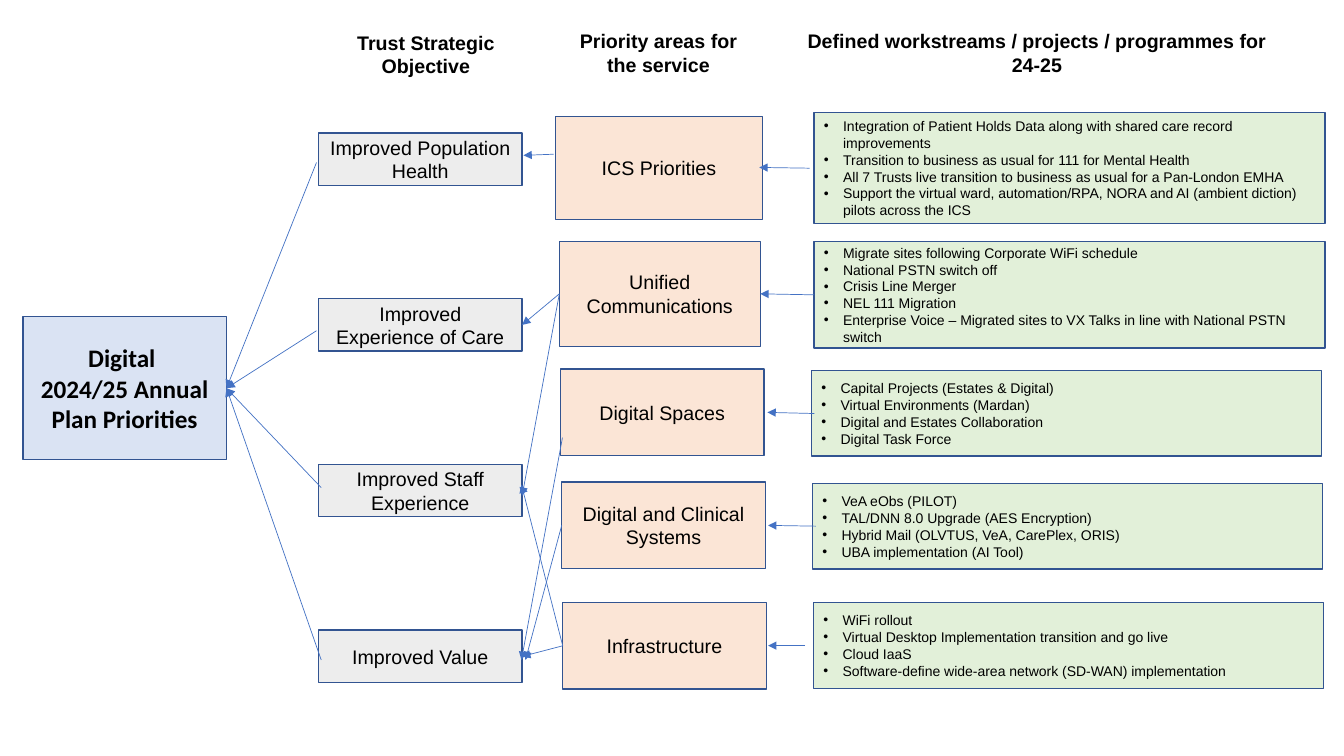
from dataclasses import dataclass
from typing import NamedTuple, Union

from lxml.etree import SubElement
from pptx import Presentation
from pptx.dml.color import RGBColor
from pptx.enum.shapes import MSO_CONNECTOR as Connector, MSO_SHAPE as Shape
from pptx.enum.text import MSO_ANCHOR as Anchor, MSO_AUTO_SIZE as AutoSize, PP_ALIGN as Align
from pptx.oxml.ns import qn
from pptx.util import Emu, Inches, Pt

# Colours
BLACK = RGBColor(0x00, 0x00, 0x00)
OUTLINE = RGBColor(0x32, 0x54, 0x91)
ARROW = RGBColor(0x44, 0x72, 0xC4)
BLUE = RGBColor(0xDA, 0xE3, 0xF3)
GREY = RGBColor(0xED, 0xED, 0xED)
PEACH = RGBColor(0xFB, 0xE5, 0xD6)
GREEN = RGBColor(0xE2, 0xF0, 0xD9)

# Grid: 100 columns by 100 rows over the whole slide
WIDTH, HEIGHT = Inches(13.33), Inches(7.5)
LEFT, RIGHT = 1, 3
BULLET_INDENT = Inches(0.19)


def col(n: float) -> Emu:
    return Emu(round(WIDTH * n / 100))


def row(n: float) -> Emu:
    return Emu(round(HEIGHT * n / 100))


class Area(NamedTuple):
    x: float
    y: float
    w: float
    h: float

    def emu(self) -> tuple:
        return col(self.x), row(self.y), col(self.w), row(self.h)


class Point(NamedTuple):
    x: float
    y: float


class Side(NamedTuple):
    box: str
    site: int


@dataclass
class Box:
    key: str
    area: Area
    lines: list
    fill: RGBColor


@dataclass
class Heading:
    area: Area
    text: str


@dataclass
class Arrow:
    tail: Union[Point, Side]
    tip: Union[Point, Side]


HEADINGS = [
    Heading(Area(22.58, 3.4, 18.23, 7.6), "Trust Strategic Objective"),
    Heading(Area(41.4, 3.2, 15.2, 7.6), "Priority areas for the service"),
    Heading(Area(58.44, 3.2, 37.43, 7.6), "Defined workstreams / projects / programmes for 24-25"),
]

PLAN = Box("plan", Area(1.7, 41.9, 15.15, 18.9),
           ["Digital ", "2024/25 Annual Plan Priorities"], BLUE)

OBJECTIVES = [
    Box(key, Area(23.7, 17.6 + 21.92 * i, 15.15, 6.93), [text], GREY)
    for i, (key, text) in enumerate([
        ("health", "Improved Population Health"),
        ("care", "Improved Experience of Care"),
        ("staff", "Improved Staff Experience"),
        ("value", "Improved Value"),
    ])
]

PRIORITIES = [
    Box("ics", Area(41.35, 15.4, 15.38, 13.6), ["ICS Priorities"], PEACH),
    Box("unified", Area(41.62, 31.92, 14.95, 13.9), ["Unified Communications"], PEACH),
    Box("spaces", Area(41.7, 48.8, 15.15, 11.45), ["Digital Spaces"], PEACH),
    Box("systems", Area(41.8, 63.75, 15.15, 11.45), ["Digital and Clinical Systems"], PEACH),
    Box("infra", Area(41.87, 79.7, 15.15, 11.45), ["Infrastructure"], PEACH),
]

WORKSTREAMS = [
    Box("ics work", Area(60.57, 14.9, 38.03, 14.65), [
        "Integration of Patient Holds Data along with shared care record improvements",
        "Transition to business as usual for 111 for Mental Health",
        "All 7 Trusts live transition to business as usual for a Pan-London EMHA",
        "Support the virtual ward, automation/RPA, NORA and AI (ambient diction) "
        "pilots across the ICS"], GREEN),
    Box("unified work", Area(60.57, 31.95, 38.03, 14.1), [
        "Migrate sites following Corporate WiFi schedule",
        "National PSTN switch off",
        "Crisis Line Merger",
        "NEL 111 Migration",
        "Enterprise Voice – Migrated sites to VX Talks in line with National PSTN switch"], GREEN),
    Box("spaces work", Area(60.38, 49.03, 37.95, 11.3), [
        "Capital Projects (Estates & Digital)",
        "Virtual Environments (Mardan)",
        "Digital and Estates Collaboration",
        "Digital Task Force"], GREEN),
    Box("systems work", Area(60.45, 63.95, 37.95, 11.3), [
        "VeA eObs (PILOT)",
        "TAL/DNN 8.0 Upgrade (AES Encryption)",
        "Hybrid Mail (OLVTUS, VeA, CarePlex, ORIS)",
        "UBA implementation (AI Tool)"], GREEN),
    Box("infra work", Area(60.53, 79.7, 37.95, 11.35), [
        "WiFi rollout",
        "Virtual Desktop Implementation transition and go live",
        "Cloud IaaS",
        "Software-define wide-area network (SD-WAN) implementation"], GREEN),
]

ARROWS = [
    # Objectives to plan
    *[Arrow(start, Side("plan", RIGHT)) for start in (
        Point(23.55, 21.5), Point(23.55, 43.75), Point(23.9, 64.5), Point(23.9, 87.3))],
    # Priorities to objectives
    Arrow(Point(41.2, 20.4), Point(38.95, 20.55)),
    Arrow(Side("unified", LEFT), Side("care", RIGHT)),
    Arrow(Side("unified", LEFT), Point(38.85, 65.6)),
    Arrow(Point(41.85, 57.9), Point(38.8, 87.3)),
    Arrow(Side("systems", LEFT), Point(39.1, 87.3)),
    Arrow(Side("infra", LEFT), Point(38.8, 64.1)),
    Arrow(Side("infra", LEFT), Side("value", RIGHT)),
    # Workstreams to priorities
    Arrow(Point(60.25, 22.25), Point(56.5, 22.15)),
    Arrow(Side("unified work", LEFT), Side("unified", RIGHT)),
    Arrow(Point(60.6, 54.7), Point(57.1, 54.55)),
    Arrow(Point(60.7, 69.6), Point(57.15, 69.5)),
    Arrow(Point(59.9, 85.4), Point(57.15, 85.4)),
]


def write(tf, lines: list, *, size: float = 14, font: str = "Arial",
          bold: bool = False, bullets: bool = False) -> None:
    tf.word_wrap = True
    for i, line in enumerate(lines):
        p = tf.add_paragraph() if i else tf.paragraphs[0]
        p.alignment = Align.LEFT if bullets else Align.CENTER
        if bullets:
            props = p._p.get_or_add_pPr()
            props.set("marL", str(BULLET_INDENT))
            props.set("indent", str(-BULLET_INDENT))
            SubElement(props, qn("a:buFont")).set("typeface", "Arial")
            SubElement(props, qn("a:buChar")).set("char", "•")
        r = p.add_run()
        r.text = line
        r.font.size, r.font.name, r.font.bold = Pt(size), font, bold
        r.font.color.rgb = BLACK


def draw_heading(s, heading: Heading) -> None:
    tf = s.shapes.add_textbox(*heading.area.emu()).text_frame
    write(tf, [heading.text], bold=True)
    tf.auto_size = AutoSize.SHAPE_TO_FIT_TEXT


def draw_box(s, box: Box, **text_format):
    sp = s.shapes.add_shape(Shape.RECTANGLE, *box.area.emu())
    sp.shadow.inherit = False
    sp.fill.solid()
    sp.fill.fore_color.rgb = box.fill
    sp.line.color.rgb = OUTLINE
    sp.line.width = Pt(1)
    sp.text_frame.vertical_anchor = Anchor.MIDDLE
    write(sp.text_frame, box.lines, **text_format)
    return sp


def draw_arrow(s, arrow: Arrow, boxes: dict) -> None:
    ends = [(col(e.x), row(e.y)) if isinstance(e, Point) else (0, 0)
            for e in (arrow.tail, arrow.tip)]
    line = s.shapes.add_connector(Connector.STRAIGHT, *ends[0], *ends[1])
    for end, join in ((arrow.tail, line.begin_connect), (arrow.tip, line.end_connect)):
        if isinstance(end, Side):
            join(boxes[end.box], end.site)
    line.line.color.rgb = ARROW
    line.line.width = Pt(0.5)
    SubElement(line.line._get_or_add_ln(), qn("a:tailEnd")).set("type", "triangle")
    SubElement(line._element.spPr, qn("a:effectLst"))


def main() -> None:
    prs = Presentation()
    prs.slide_width, prs.slide_height = WIDTH, HEIGHT
    s = prs.slides.add_slide(prs.slide_layouts[6])
    for heading in HEADINGS:
        draw_heading(s, heading)
    boxes = {PLAN.key: draw_box(s, PLAN, size=18, font="Calibri", bold=True)}
    for box in OBJECTIVES + PRIORITIES:
        boxes[box.key] = draw_box(s, box)
    for box in WORKSTREAMS:
        boxes[box.key] = draw_box(s, box, size=10, bullets=True)
    for arrow in ARROWS:
        draw_arrow(s, arrow, boxes)
    prs.save("out.pptx")


if __name__ == "__main__":
    main()
